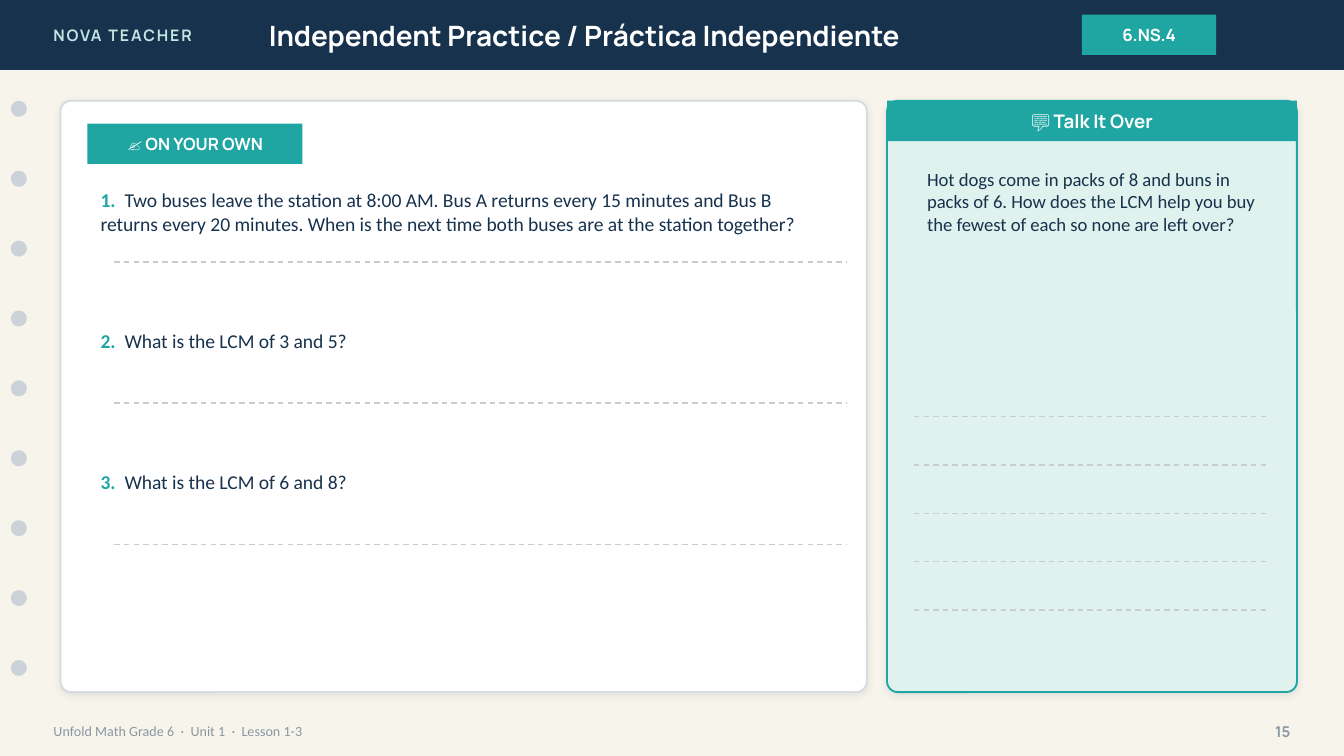
from typing import NamedTuple

from lxml.etree import SubElement
from pptx import Presentation
from pptx.dml.color import RGBColor
from pptx.enum.dml import MSO_LINE_DASH_STYLE as Dash
from pptx.enum.shapes import MSO_CONNECTOR as Connector, MSO_SHAPE as Preset
from pptx.enum.text import MSO_ANCHOR as Anchor, MSO_AUTO_SIZE as AutoSize, PP_ALIGN as Align
from pptx.oxml.ns import qn
from pptx.util import Emu, Pt

PX = 914400 // 200
NAVY, TEAL, WHITE, GREY = "17324D", "1FA6A2", "FFFFFF", "8A96A3"
HEADING_FONT, BODY_FONT = "Manrope", "Calibri"


class Box(NamedTuple):
    """Position and size in px."""
    left: int
    top: int
    width: int
    height: int

    def emu(self) -> list[Emu]:
        """Give the four lengths in EMU."""
        return [Emu(length * PX) for length in self]


class Card(NamedTuple):
    """A rounded panel with a soft shadow."""
    box: Box
    radius: float
    fill: str
    border: str


class Run(NamedTuple):
    """A stretch of text in one colour and weight."""
    text: str
    color: str
    bold: bool = False


def rgb(color: str) -> RGBColor:
    """Turn a hex string into a colour."""
    return RGBColor.from_string(color)


def write(holder, *runs: Run, size: float, font: str = HEADING_FONT, align=Align.LEFT,
          anchor=Anchor.MIDDLE, spacing: int = 0) -> None:
    """Fill a shape with one paragraph of formatted runs."""
    frame = holder.text_frame
    frame.word_wrap = True
    frame.auto_size = AutoSize.NONE
    frame.vertical_anchor = anchor
    paragraph = frame.paragraphs[0]
    paragraph.alignment = align
    for part in runs:
        run = paragraph.add_run()
        run.text = part.text
        run.font.size, run.font.name, run.font.bold = Pt(size), font, part.bold
        run.font.color.rgb = rgb(part.color)
        if spacing:
            run._r.get_or_add_rPr().set("spc", str(spacing))


def add_text(slide, box: Box, *runs: Run, **text_format) -> None:
    """Place a text box."""
    write(slide.shapes.add_textbox(*box.emu()), *runs, **text_format)


def add_flat(slide, box: Box, fill: str, preset=Preset.RECTANGLE):
    """Place a filled shape without outline or shadow."""
    shape = slide.shapes.add_shape(preset, *box.emu())
    shape.shadow.inherit = False
    shape.fill.solid()
    shape.fill.fore_color.rgb = rgb(fill)
    shape.line.fill.background()
    return shape


def add_label(slide, box: Box, text: str, size: float) -> None:
    """Place a teal label with centred white text."""
    write(add_flat(slide, box, TEAL), Run(text, WHITE, True), size=size, align=Align.CENTER)


def add_card(slide, card: Card) -> None:
    """Place a rounded card with its border and shadow."""
    panel = add_flat(slide, card.box, card.fill, Preset.ROUNDED_RECTANGLE)
    panel.adjustments[0] = card.radius
    panel.line.color.rgb = rgb(card.border)
    panel.line.width = Pt(1)
    effects = panel._element.spPr.find(qn("a:effectLst"))
    shadow = SubElement(effects, qn("a:outerShdw"), blurRad=str(Pt(4)), dist=str(Pt(1)),
                        dir="5400000", algn="bl", rotWithShape="0")
    tint = SubElement(shadow, qn("a:srgbClr"), val="1C2E42")
    SubElement(tint, qn("a:alpha"), val="10000")


def add_answer_line(slide, left: int, right: int, y: int) -> None:
    """Place a dashed writing line."""
    rule = slide.shapes.add_connector(
        Connector.STRAIGHT, *(Emu(n * PX) for n in (left, y, right, y)))
    rule.line.color.rgb = rgb("C7CDD2")
    rule.line.width = Pt(0.75)
    rule.line.dash_style = Dash.DASH
    SubElement(rule._element.spPr, qn("a:effectLst"))


def add_header(slide) -> None:
    """Draw the header bar with the lesson title."""
    add_flat(slide, Box(0, 0, 2000, 104), NAVY)
    add_text(slide, Box(60, 0, 480, 104), Run("NOVA TEACHER", "BFE6E2", True),
             size=8.5, spacing=100)
    title = slide.shapes.title
    title.left, title.top, title.width, title.height = Box(380, 0, 1120, 104).emu()
    write(title, Run("Independent Practice / Práctica Independiente", WHITE, True), size=15)
    slide.shapes._spTree.append(title._element)
    add_label(slide, Box(1610, 22, 200, 60), "6.NS.4", 9)


def add_margins(slide) -> None:
    """Draw the punched holes and the footer."""
    for hole in range(9):
        add_flat(slide, Box(16, 150 + 104 * hole, 24, 24), "CBD3D9", Preset.OVAL)
    add_text(slide, Box(60, 1060, 1400, 56),
             Run("Unfold Math Grade 6  ·  Unit 1  ·  Lesson 1-3", GREY), size=7.5, font=BODY_FONT)
    add_text(slide, Box(1840, 1060, 100, 56), Run("15", GREY, True), size=8, align=Align.RIGHT)


def add_practice(slide) -> None:
    """Draw the card of numbered questions."""
    questions = (
        "Two buses leave the station at 8:00 AM. Bus A returns every 15 minutes and Bus B "
        "returns every 20 minutes. When is the next time both buses are at the station together?",
        "What is the LCM of 3 and 5?",
        "What is the LCM of 6 and 8?",
    )
    add_card(slide, Card(Box(90, 150, 1200, 880), 0.018, WHITE, "D6DBDF"))
    add_label(slide, Box(130, 184, 320, 60), "✍️ ON YOUR OWN", 9)
    for index, question in enumerate(questions):
        top = 270 + 210 * index
        add_text(slide, Box(130, top, 1130, 100), Run(f"{index + 1}.  ", TEAL, True),
                 Run(question, NAVY), size=10.5, font=BODY_FONT, anchor=Anchor.TOP)
        add_answer_line(slide, 170, 1260, top + 120)


def add_discussion(slide) -> None:
    """Draw the discussion card with its prompt and writing lines."""
    add_card(slide, Card(Box(1320, 150, 610, 880), 0.026, "DFF2EE", TEAL))
    add_label(slide, Box(1320, 150, 610, 60), "💬 Talk It Over", 10)
    add_text(slide, Box(1360, 240, 540, 340),
             Run("Hot dogs come in packs of 8 and buns in packs of 6. How does the LCM help "
                 "you buy the fewest of each so none are left over?", NAVY),
             size=10, font=BODY_FONT, anchor=Anchor.TOP)
    for row in range(5):
        add_answer_line(slide, 1360, 1890, 620 + 72 * row)


def main() -> None:
    """Build and save the practice slide."""
    deck = Presentation()
    deck.slide_width, deck.slide_height = Emu(2000 * PX), Emu(1125 * PX)
    slide = deck.slides.add_slide(deck.slide_layouts[5])
    slide.background.fill.solid()
    slide.background.fill.fore_color.rgb = rgb("F7F4EC")
    add_header(slide)
    add_margins(slide)
    add_practice(slide)
    add_discussion(slide)
    deck.save("out.pptx")


if __name__ == "__main__":
    main()
